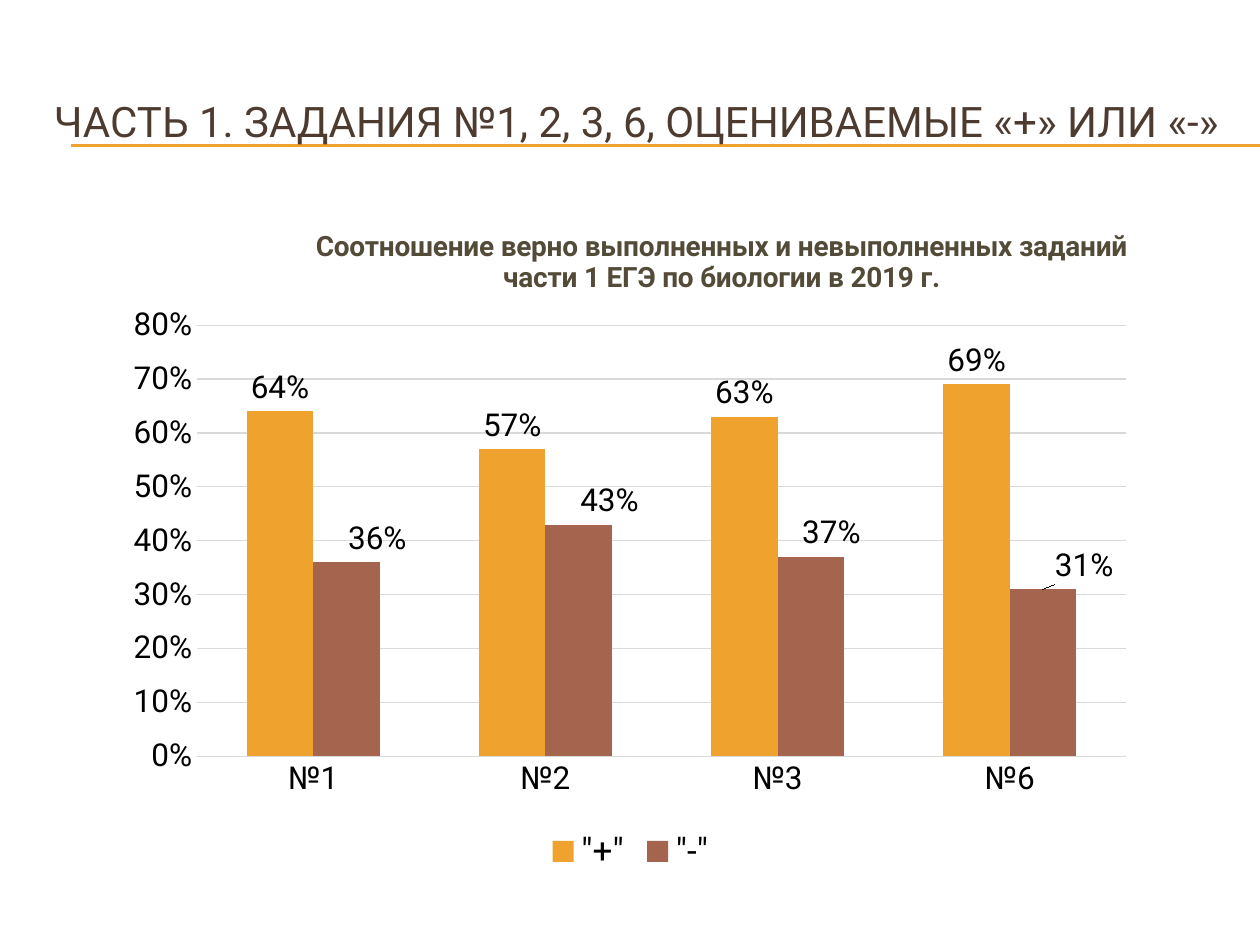
from dataclasses import dataclass
from typing import Any

from lxml.etree import SubElement
from pptx import Presentation
from pptx.chart.data import CategoryChartData
from pptx.dml.color import RGBColor
from pptx.enum.chart import XL_CHART_TYPE, XL_LABEL_POSITION, XL_LEGEND_POSITION, XL_TICK_MARK
from pptx.enum.shapes import MSO_CONNECTOR
from pptx.enum.text import MSO_ANCHOR
from pptx.oxml import parse_xml
from pptx.oxml.ns import nsdecls, qn
from pptx.util import Inches, Pt

COLORS = {"orange": "F0A22E", "brown": "A5644E", "title": "4E3B30",
          "chart_title": "534B38", "grid": "D9D9D9", "text": "000000"}


@dataclass
class Bars:
    """One series, with optional label shifts as fractions of the chart width."""
    name: str
    values: tuple[float, ...]
    color: str
    shifts: tuple[float, ...] = ()


CATEGORIES = ("№1", "№2", "№3", "№6")
SERIES = (
    Bars('"+"', (0.64, 0.57, 0.63, 0.69), "orange"),
    Bars('"-"', (0.36, 0.43, 0.37, 0.31), "brown", (0.03, 0.03, 0.02, 0.04)),
)


def rgb(name: str) -> RGBColor:
    """Return the named colour."""
    return RGBColor.from_string(COLORS[name])


def set_attrs(obj: Any, values: dict[str, Any]) -> None:
    """Set each attribute of an object from a dict."""
    for key, value in values.items():
        setattr(obj, key, value)


def set_font(font: Any, size: float, color: str, bold: bool = False) -> None:
    """Format a font."""
    set_attrs(font, {"name": "Roboto", "size": Pt(size), "bold": bold})
    font.color.rgb = rgb(color)


def add_rule(s: Any, y: float) -> None:
    """Draw a horizontal rule to the right edge of the slide."""
    c = s.shapes.add_connector(MSO_CONNECTOR.STRAIGHT, Inches(0.56), Inches(y), Inches(10), Inches(y))
    c.line.color.rgb = rgb("orange")
    c.line.width = Pt(0.75)
    SubElement(c._element.spPr, qn("a:effectLst"))


def add_title(s: Any, text: str) -> None:
    """Add the slide title."""
    tf = s.shapes.add_textbox(Inches(0.33), Inches(0.5), Inches(9.5), Inches(0.92)).text_frame
    set_attrs(tf, {"word_wrap": True, "vertical_anchor": MSO_ANCHOR.MIDDLE})
    r = tf.paragraphs[0].add_run()
    r.text = text
    set_font(r.font, 24, "title")


def manual_layout(**values: Any) -> Any:
    """Build a manual layout element for a chart part."""
    items = "".join(f'<c:{key} val="{value}"/>' for key, value in values.items())
    return parse_xml(f'<c:layout {nsdecls("c")}><c:manualLayout>{items}</c:manualLayout></c:layout>')


def format_series(ser: Any, bars: Bars) -> None:
    """Colour a series and place its labels."""
    ser.format.fill.solid()
    ser.format.fill.fore_color.rgb = rgb(bars.color)
    ser.invert_if_negative = False
    labels = ser.data_labels
    set_attrs(labels, {"show_value": True, "number_format": "0%",
                       "number_format_is_linked": False,
                       "position": XL_LABEL_POSITION.OUTSIDE_END})
    set_font(labels.font, 18, "text")
    for i, shift in enumerate(bars.shifts):
        label = ser.points[i].data_label
        set_font(label.font, 18, "text")
        label.position = XL_LABEL_POSITION.OUTSIDE_END
        idx = ser._element.xpath(f'.//c:dLbl/c:idx[@val="{i}"]')[0]
        idx.addnext(manual_layout(x=shift, y=0))


def add_bar_chart(s: Any, title: str) -> None:
    """Add the clustered column chart."""
    data = CategoryChartData(number_format="0%")
    data.categories = CATEGORIES
    for bars in SERIES:
        data.add_series(bars.name, bars.values)
    chart = s.shapes.add_chart(XL_CHART_TYPE.COLUMN_CLUSTERED, Inches(0.91), Inches(1.55),
                               Inches(8.19), Inches(5.43), data).chart
    set_font(chart.font, 18, "text")
    tf = chart.chart_title.text_frame
    tf.text = title
    set_font(tf.paragraphs[0].runs[0].font, 16, "chart_title", True)
    title_el = chart.chart_title._element
    for old in title_el.findall(qn("c:layout")):
        title_el.remove(old)
    title_el.find(qn("c:tx")).addnext(
        manual_layout(xMode="edge", yMode="edge", x=0.19, y=0.04))
    chart.has_legend = True
    set_attrs(chart.legend, {"position": XL_LEGEND_POSITION.BOTTOM, "include_in_layout": False})
    set_font(chart.legend.font, 20, "text")
    for axis in (chart.category_axis, chart.value_axis):
        set_attrs(axis, {"major_tick_mark": XL_TICK_MARK.NONE, "minor_tick_mark": XL_TICK_MARK.NONE})
        axis.format.line.fill.background()
        set_font(axis.tick_labels.font, 18, "text")
    axis = chart.value_axis
    set_attrs(axis, {"minimum_scale": 0, "maximum_scale": 0.8, "major_unit": 0.1})
    set_attrs(axis.tick_labels, {"number_format": "0%", "number_format_is_linked": False})
    grid = axis.major_gridlines.format.line
    grid.color.rgb = rgb("grid")
    grid.width = Pt(0.75)
    plot = chart.plots[0]
    set_attrs(plot, {"gap_width": 150, "overlap": 0, "vary_by_categories": False})
    area = chart._chartSpace.chart.plotArea
    for old in area.findall(qn("c:layout")):
        area.remove(old)
    area.insert(0, manual_layout(layoutTarget="inner", xMode="edge", yMode="edge",
                                 x=0.08, y=0.19, w=0.9, h=0.63))
    for ser, bars in zip(plot.series, SERIES):
        format_series(ser, bars)


def main() -> None:
    """Build and save the slide."""
    prs = Presentation()
    set_attrs(prs, {"slide_width": Inches(10), "slide_height": Inches(7.5)})
    s = prs.slides.add_slide(prs.slide_layouts[6])
    for y in (1.15, 1.16):
        add_rule(s, y)
    add_title(s, "ЧАСТЬ 1. ЗАДАНИЯ №1, 2, 3, 6, ОЦЕНИВАЕМЫЕ «+» ИЛИ «-»")
    add_bar_chart(s, "Соотношение верно выполненных и невыполненных заданий "
                     "части 1 ЕГЭ по биологии в 2019 г.")
    prs.save("out.pptx")


if __name__ == "__main__":
    main()
